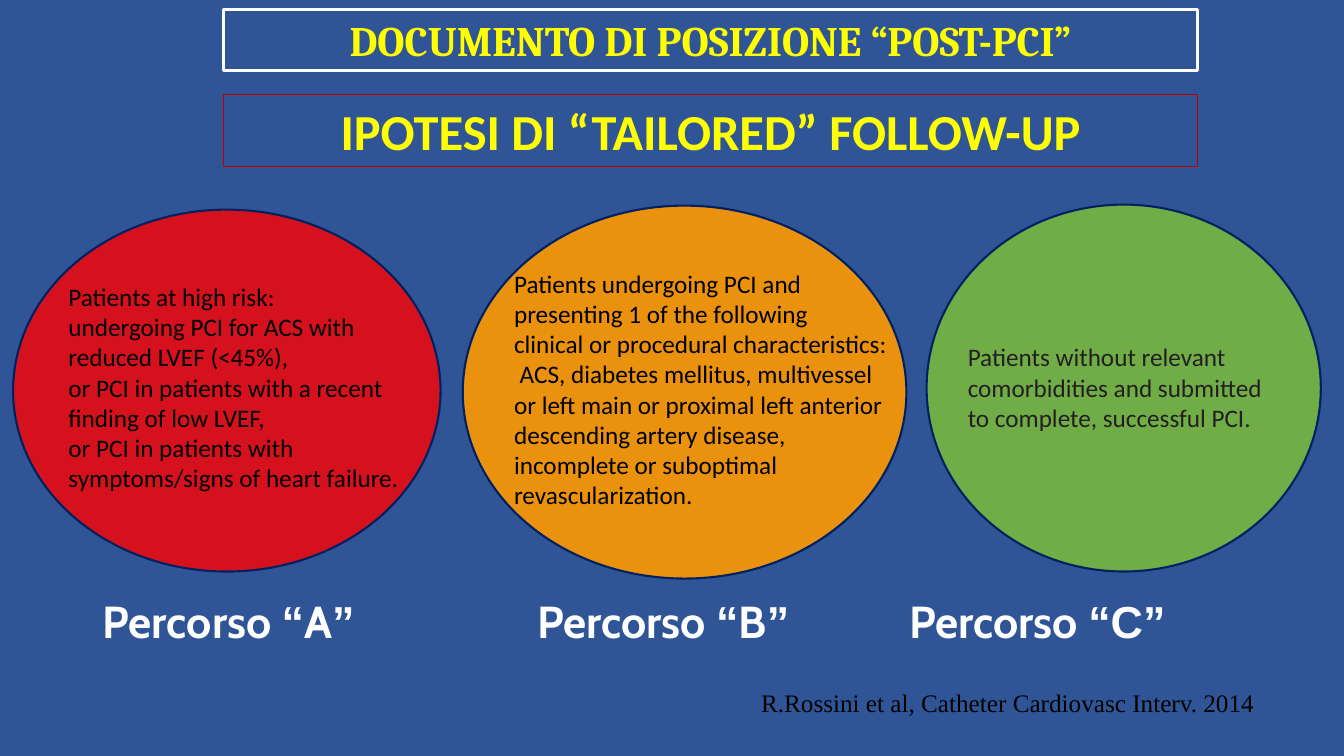
from dataclasses import dataclass

import lxml.etree
import pptx
import pptx.dml.color
import pptx.enum.shapes
import pptx.enum.text
import pptx.oxml.ns
import pptx.util

Inches = pptx.util.Inches
Pt = pptx.util.Pt
qn = pptx.oxml.ns.qn
Box = tuple[float, float, float, float]

COLORS = {
    "background": "2F5597", "red": "FF0000", "orange": "FF9900",
    "green": "70AD47", "navy": "002060", "crimson": "C00000",
    "yellow": "FFFF00", "white": "FFFFFF", "black": "000000",
    "charcoal": "231F20",
}


@dataclass
class Heading:
    text: str
    box: Box
    font: str
    size: int
    line: str
    line_width: float


@dataclass
class Pathway:
    circle: Box
    fill: str
    opacity: int
    text_box: Box
    text_color: str
    lines: list[str]


HEADINGS = [
    Heading("IPOTESI DI “TAILORED” FOLLOW-UP", (2.22, 0.94, 9.66, 0.71),
            "Calibri", 36, "crimson", 0.75),
    Heading("DOCUMENTO DI POSIZIONE “POST-PCI”", (2.22, 0.09, 9.66, 0.61),
            "Cambria", 30, "white", 2.25),
]

PATHWAYS = [
    Pathway((0.13, 2.08, 4.24, 3.59), "red", 80, (0.58, 2.74, 3.55, 2.22), "black", [
        "Patients at high risk:",
        "undergoing PCI for ACS with reduced LVEF (<45%),",
        "or PCI in patients with a recent finding of low LVEF,",
        "or PCI in patients with symptoms/signs of heart failure.",
    ]),
    Pathway((4.59, 2.04, 4.4, 3.7), "orange", 90, (5, 2.61, 4.02, 2.52), "black", [
        "Patients undergoing PCI and presenting 1 of the following",
        "clinical or procedural characteristics:",
        " ACS, diabetes mellitus, multivessel or left main or proximal left anterior "
        "descending artery disease, incomplete or suboptimal",
        "revascularization.",
    ]),
    Pathway((9.19, 2.03, 3.91, 3.64), "green", 100, (9.5, 3.34, 3.49, 1.01), "charcoal", [
        "Patients without relevant comorbidities and submitted",
        "to complete, successful PCI.",
    ]),
]

# Pathway names share one line; tab stops place the second and third
LABEL_TABS = [4.31, 8.0]
LABEL_RUNS = [
    ("Percorso ", "Cabin"), ("“", "Arial"), ("A", "Cabin"), ("”\t", "Arial"),
    ("Percorso ", "Cabin"), ("“", "Arial"), ("B", "Cabin"), ("”\t", "Arial"),
    ("Percorso ", "Cabin"), ("“C”", "Arial"),
]


def rgb(name: str) -> pptx.dml.color.RGBColor:
    return pptx.dml.color.RGBColor.from_string(COLORS[name])


def style_font(font, name: str, size: int, color: str, bold: bool = False) -> None:
    font.name, font.size, font.bold = name, Pt(size), bold
    font.color.rgb = rgb(color)


def add_outlined_shape(slide, kind, box: Box, line: str, width: float):
    shape = slide.shapes.add_shape(kind, *map(Inches, box))
    shape.shadow.inherit = False
    shape.line.color.rgb = rgb(line)
    shape.line.width = Pt(width)
    return shape


def add_heading(slide, heading: Heading) -> None:
    shape = add_outlined_shape(slide, pptx.enum.shapes.MSO_SHAPE.RECTANGLE,
                               heading.box, heading.line, heading.line_width)
    shape.fill.background()
    shape.text_frame.text = heading.text
    paragraph = shape.text_frame.paragraphs[0]
    paragraph.alignment = pptx.enum.text.PP_ALIGN.CENTER
    style_font(paragraph.runs[0].font, heading.font, heading.size, "yellow", bold=True)


def add_circle(slide, pathway: Pathway) -> None:
    shape = add_outlined_shape(slide, pptx.enum.shapes.MSO_SHAPE.OVAL,
                               pathway.circle, "navy", 1.5)
    shape.fill.solid()
    shape.fill.fore_color.rgb = rgb(pathway.fill)
    if pathway.opacity < 100:
        color = shape.fill._xPr.find(qn("a:solidFill"))[0]
        lxml.etree.SubElement(color, qn("a:alpha"), val=str(pathway.opacity * 1000))


def add_text_frame(slide, box: Box, wrap: bool = True):
    text_frame = slide.shapes.add_textbox(*map(Inches, box)).text_frame
    text_frame.word_wrap = wrap
    text_frame.auto_size = pptx.enum.text.MSO_AUTO_SIZE.SHAPE_TO_FIT_TEXT
    return text_frame


def add_text(slide, box: Box, lines: list[str], font: str, color: str,
             wrap: bool = True) -> None:
    text_frame = add_text_frame(slide, box, wrap)
    text_frame.text = "\n".join(lines)
    for paragraph in text_frame.paragraphs:
        style_font(paragraph.runs[0].font, font, 18, color)


def add_labels(slide) -> None:
    paragraph = add_text_frame(slide, (0.92, 5.84, 12.17, 0.64)).paragraphs[0]
    properties = paragraph._p.get_or_add_pPr()
    tab_list = lxml.etree.SubElement(properties, qn("a:tabLst"))
    for position in LABEL_TABS:
        lxml.etree.SubElement(tab_list, qn("a:tab"), pos=str(Inches(position)), algn="l")
    for text, font in LABEL_RUNS:
        run = paragraph.add_run()
        run.text = text
        style_font(run.font, font, 32, "white", bold=True)


def main() -> None:
    presentation = pptx.Presentation()
    presentation.slide_width = Inches(13.33)
    presentation.slide_height = Inches(7.5)
    slide = presentation.slides.add_slide(presentation.slide_layouts[6])
    slide.background.fill.solid()
    slide.background.fill.fore_color.rgb = rgb("background")

    # Circles, right to left
    for pathway in reversed(PATHWAYS):
        add_circle(slide, pathway)

    # Pathway names and headings
    add_labels(slide)
    for heading in HEADINGS:
        add_heading(slide, heading)

    # Citation and patient descriptions
    add_text(slide, (7.45, 6.77, 5.14, 0.4),
             ["R.Rossini et al, Catheter Cardiovasc Interv. 2014"],
             "Times New Roman", "black", wrap=False)
    for pathway in PATHWAYS:
        add_text(slide, pathway.text_box, pathway.lines, "Calibri", pathway.text_color)

    presentation.save("out.pptx")


if __name__ == "__main__":
    main()
